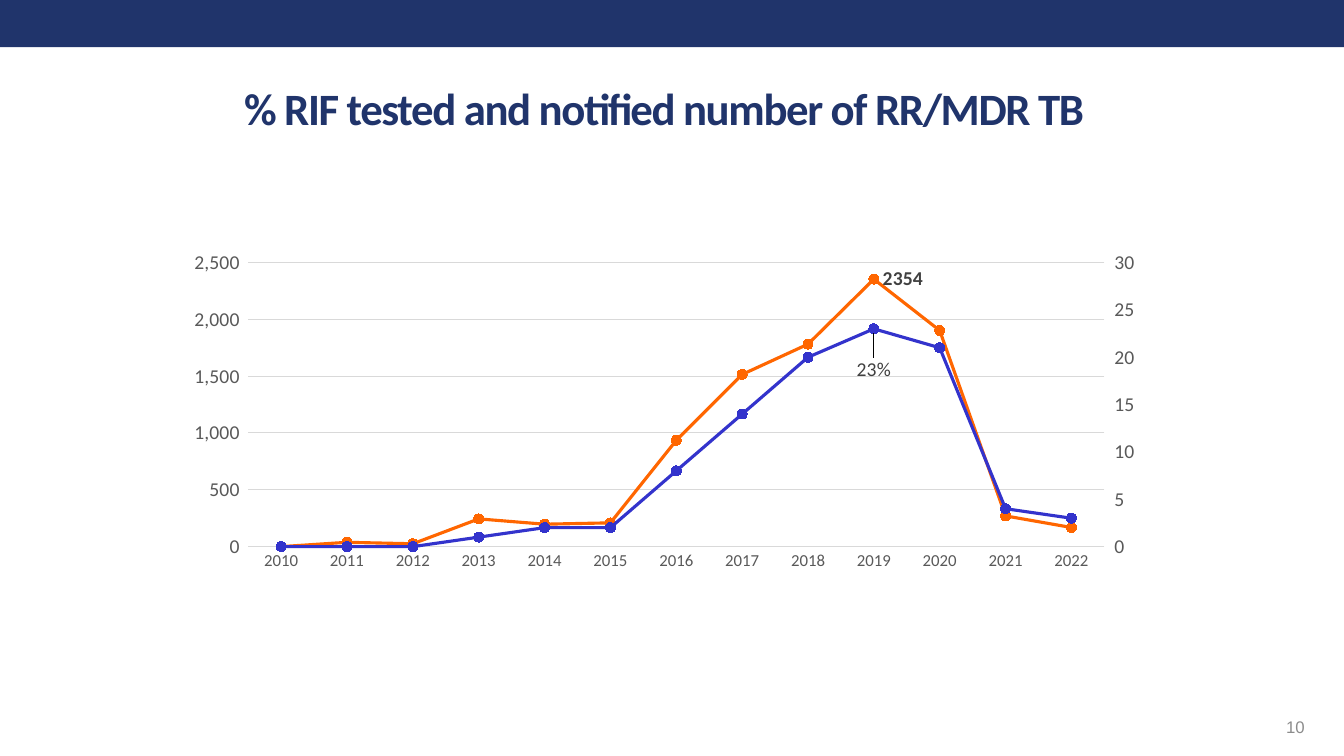
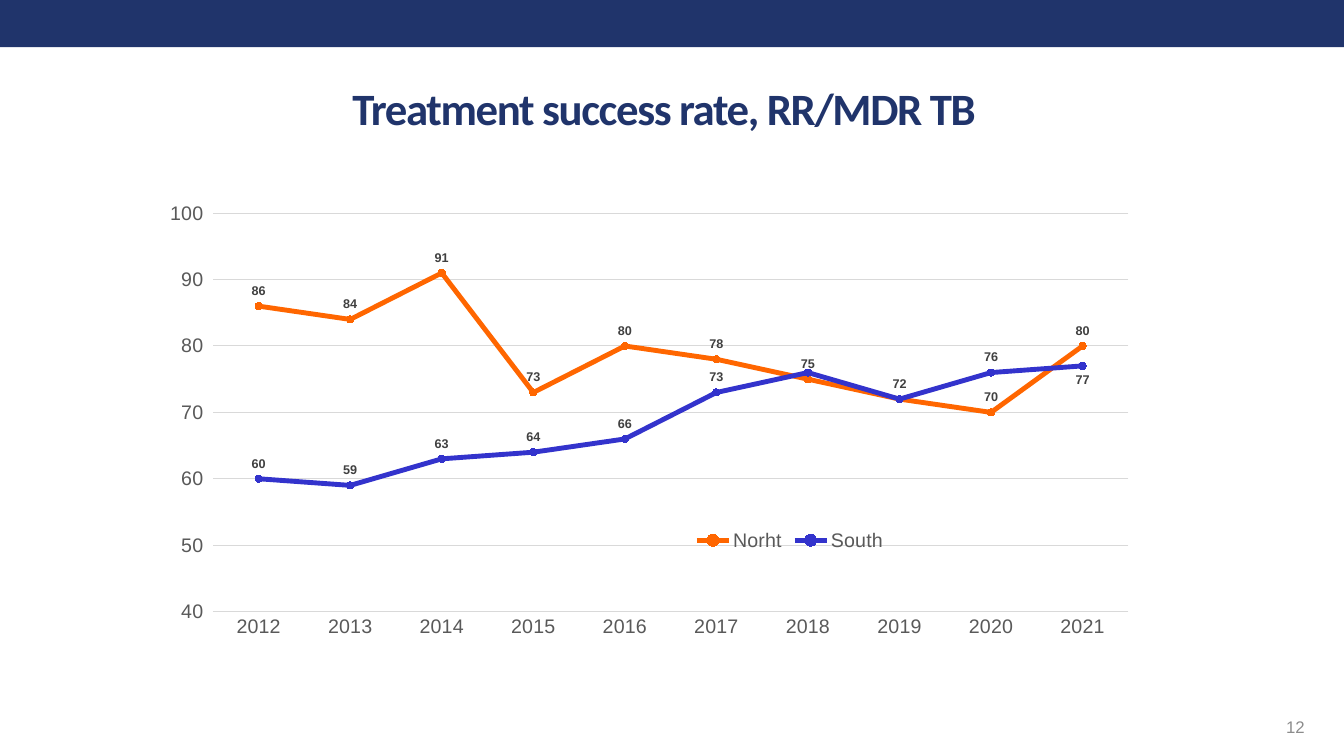
from copy import deepcopy

from pptx import Presentation
from pptx.chart.axis import ValueAxis
from pptx.chart.data import CategoryChartData
from pptx.dml.color import RGBColor
from pptx.enum.chart import (XL_CHART_TYPE, XL_LABEL_POSITION, XL_LEGEND_POSITION,
                             XL_MARKER_STYLE, XL_TICK_MARK)
from pptx.enum.shapes import MSO_SHAPE
from pptx.enum.text import MSO_ANCHOR, PP_ALIGN
from pptx.oxml import parse_xml
from pptx.util import Inches, Pt

LINE_MARKERS = XL_CHART_TYPE.LINE_MARKERS
ABOVE, BELOW, RIGHT = XL_LABEL_POSITION.ABOVE, XL_LABEL_POSITION.BELOW, XL_LABEL_POSITION.RIGHT
LEGEND_BOTTOM = XL_LEGEND_POSITION.BOTTOM
CIRCLE = XL_MARKER_STYLE.CIRCLE
NO_TICK, TICK_OUT = XL_TICK_MARK.NONE, XL_TICK_MARK.OUTSIDE
RECTANGLE = MSO_SHAPE.RECTANGLE
MIDDLE = MSO_ANCHOR.MIDDLE
CENTER, RIGHT_ALIGNED = PP_ALIGN.CENTER, PP_ALIGN.RIGHT

COLORS = {"navy": "20346B", "orange": "FF6600", "blue": "3333CC", "grid": "D9D9D9",
          "axis": "595959", "label": "404040", "number": "8C8C8C", "black": "000000"}
SERIES_COLORS = ("orange", "blue")
HEADING_FONT, BODY_FONT = "Calibri", "Arial"

SLIDE_WIDTH, SLIDE_HEIGHT = Inches(13.33), Inches(7.5)
COLUMN, ROW = SLIDE_WIDTH / 100, SLIDE_HEIGHT / 100
BAND_BOX = (0, 0, 100, 6.25)
TITLE_BOX = (4.13, 8, 90.55, 12.4)
NUMBER_BOX = (86.57, 93.47, 11.25, 5.33)
NOTIFIED_BOX = (12.68, 23.07, 72.39, 64.8)
SUCCESS_BOX = (11.4, 25.6, 74.04, 65.07)

CHART_NAMESPACE = "http://schemas.openxmlformats.org/drawingml/2006/chart"


def place(box):
    left, top, width, height = box
    return int(left * COLUMN), int(top * ROW), int(width * COLUMN), int(height * ROW)


def color(name):
    return RGBColor.from_string(COLORS[name])


def style_font(font, size, color_name, name=BODY_FONT, bold=False):
    font.size = Pt(size)
    font.name = name
    font.bold = bold
    font.color.rgb = color(color_name)


def add_text(slide, box, text, alignment, size, color_name, name=BODY_FONT, bold=False):
    frame = slide.shapes.add_textbox(*place(box)).text_frame
    frame.word_wrap = True
    frame.vertical_anchor = MIDDLE
    paragraph = frame.paragraphs[0]
    paragraph.alignment = alignment
    run = paragraph.add_run()
    run.text = text
    style_font(run.font, size, color_name, name, bold)
    return run


def add_framed_slide(presentation, title, number):
    slide = presentation.slides.add_slide(presentation.slide_layouts[6])
    band = slide.shapes.add_shape(RECTANGLE, *place(BAND_BOX))
    band.shadow.inherit = False
    band.fill.solid()
    band.fill.fore_color.rgb = color("navy")
    band.line.fill.background()
    run = add_text(slide, TITLE_BOX, title, CENTER, 32, "navy", HEADING_FONT, True)
    run._r.get_or_add_rPr().set("spc", "-100")
    add_text(slide, NUMBER_BOX, number, RIGHT_ALIGNED, 12, "number")
    return slide


def make_layout(inner=False, **shares):
    target = '<c:layoutTarget val="inner"/>' if inner else ""
    modes = "".join(f'<c:{side}Mode val="edge"/>' for side in "xy") if "w" in shares else ""
    values = "".join(f'<c:{key} val="{value}"/>' for key, value in shares.items())
    return parse_xml(f'<c:layout xmlns:c="{CHART_NAMESPACE}"><c:manualLayout>'
                     f"{target}{modes}{values}</c:manualLayout></c:layout>")


def style_axis(axis, size, font_name):
    axis.major_tick_mark = axis.minor_tick_mark = NO_TICK
    style_font(axis.tick_labels.font, size, "axis", font_name)


def add_line_chart(slide, box, categories, series, font_name, category_size, number_format, plot):
    data = CategoryChartData()
    data.categories = categories
    for name, values in series:
        data.add_series(name, values)
    chart = slide.shapes.add_chart(LINE_MARKERS, *place(box), data).chart
    chart.has_title = False
    chart.has_legend = False
    style_font(chart.font, 10, "black")
    plot_area = chart._chartSpace.chart.plotArea
    for old_layout in plot_area.xpath("c:layout"):
        plot_area.remove(old_layout)
    plot_area.insert(0, make_layout(True, **dict(zip("xywh", plot))))

    style_axis(chart.category_axis, category_size, font_name)
    chart.category_axis.format.line.color.rgb = color("grid")
    chart.category_axis.format.line.width = Pt(0.75)
    axis = chart.value_axis
    style_axis(axis, 14, font_name)
    axis.format.line.fill.background()
    axis.major_gridlines.format.line.color.rgb = color("grid")
    axis.major_gridlines.format.line.width = Pt(0.75)
    axis.tick_labels.number_format = number_format
    axis.tick_labels.number_format_is_linked = False
    return chart


def set_scale(axis, minimum, maximum, step):
    axis.minimum_scale, axis.maximum_scale, axis.major_unit = minimum, maximum, step


def move_last_series_to_right_axis(chart):
    plot_area = chart._chartSpace.chart.plotArea
    left_lines = plot_area.xpath("c:lineChart")[0]
    right_lines = deepcopy(left_lines)
    left_lines.remove(left_lines.xpath("c:ser")[-1])
    for series in right_lines.xpath("c:ser")[:-1]:
        right_lines.remove(series)
    left_lines.addnext(right_lines)

    category_axis = deepcopy(chart.category_axis._element)
    value_axis = deepcopy(chart.value_axis._element)
    chart.value_axis._element.addnext(value_axis)
    value_axis.addnext(category_axis)
    right_ids = {}
    for index, axis in enumerate((category_axis, value_axis)):
        right_ids[axis.xpath("c:axId")[0].get("val")] = str(5001 + index)
    for part in (right_lines, category_axis, value_axis):
        for reference in part.xpath("c:axId | c:crossAx"):
            reference.set("val", right_ids[reference.get("val")])
    category_axis.xpath("c:delete")[0].set("val", "1")
    value_axis.xpath("c:axPos")[0].set("val", "r")
    value_axis.xpath("c:crosses")[0].set("val", "max")
    right_axis = ValueAxis(value_axis)
    right_axis.has_major_gridlines = False
    right_axis.major_tick_mark = TICK_OUT
    right_axis.tick_labels.number_format = "General"
    return right_axis


def style_series(chart, line_width, marker_size):
    for series, color_name in zip(chart.series, SERIES_COLORS):
        series.smooth = False
        series.format.line.color.rgb = color(color_name)
        series.format.line.width = Pt(line_width)
        series.marker.style = CIRCLE
        series.marker.size = marker_size
        series.marker.format.fill.solid()
        series.marker.format.fill.fore_color.rgb = color(color_name)
        series.marker.format.line.color.rgb = color(color_name)
    for plot in chart.plots:
        plot.vary_by_categories = False


def find_label(series, index):
    return series.data_labels._element.xpath(f'c:dLbl[c:idx/@val="{index}"]')[0]


def add_notified_chart(slide, box):
    series = (
        ("Series 1", (0, 38, 25, 244, 197, 209, 935, 1515, 1782, 2354, 1902, 270, 168)),
        ("Series 2", (None, None, None, 1, 2, 2, 8, 14, 20, 23, 21, 4, 3)),
    )
    years = [str(year) for year in range(2010, 2023)]
    chart = add_line_chart(slide, box, years, series, HEADING_FONT, 12,
                           r"#,##0_);[Red]\(#,##0\)", (0.08, 0.18, 0.88, 0.58))
    chart._chartSpace.xpath("c:chart/c:dispBlanksAs")[0].set("val", "zero")
    right_axis = move_last_series_to_right_axis(chart)
    set_scale(chart.value_axis, 0, 2500, 500)
    set_scale(right_axis, 0, 30, 5)
    style_series(chart, 2.25, 7)

    peak = years.index("2019")
    notified, tested = chart.series
    for line in (notified, tested):
        line.data_labels.show_value = False
    notified_label = notified.points[peak].data_label
    notified_label.position = RIGHT
    style_font(notified_label.font, 14, "label", HEADING_FONT, True)
    tested_label = tested.points[peak].data_label
    tested_label.position = BELOW
    run = tested_label.text_frame.paragraphs[0].add_run()
    run.text = "23%"
    style_font(run.font, 14, "label", HEADING_FONT)
    find_label(tested, peak).xpath("c:idx")[0].addnext(make_layout(x=0, y=0.04))


def add_success_chart(slide, box):
    series = (
        ("Norht", (86, 84, 91, 73, 80, 78, 75, 72, 70, 80)),
        ("South", (60, 59, 63, 64, 66, 73, 76, 72, 76, 77)),
    )
    years = [str(year) for year in range(2012, 2022)]
    chart = add_line_chart(slide, box, years, series, BODY_FONT, 14, "0_ ",
                           (0.06, 0.04, 0.92, 0.81))
    set_scale(chart.value_axis, 40, 100, 10)
    style_series(chart, 3.5, 5)
    for line in chart.series:
        labels = line.data_labels
        labels.show_value = True
        labels.position = ABOVE
        labels.number_format = "0"
        labels.number_format_is_linked = False
        style_font(labels.font, 9, "label", bold=True)

    south = chart.series[1]
    for year in ("2018", "2019"):
        index = years.index(year)
        south.points[index].data_label.position = ABOVE
        find_label(south, index).xpath("c:showVal")[0].set("val", "0")
    last_label = south.points[len(years) - 1].data_label
    last_label.position = BELOW
    style_font(last_label.font, 9, "label", bold=True)

    chart.has_legend = True
    legend = chart.legend
    legend.position = LEGEND_BOTTOM
    legend.include_in_layout = False
    style_font(legend.font, 14, "axis")
    legend._element.xpath("c:legendPos")[0].addnext(make_layout(x=0.54, y=0.67, w=0.2, h=0.07))


def main():
    presentation = Presentation()
    presentation.slide_width, presentation.slide_height = SLIDE_WIDTH, SLIDE_HEIGHT
    slide = add_framed_slide(presentation, "% RIF tested and notified number of RR/MDR TB", "10")
    add_notified_chart(slide, NOTIFIED_BOX)
    slide = add_framed_slide(presentation, "Treatment success rate, RR/MDR TB", "12")
    add_success_chart(slide, SUCCESS_BOX)
    presentation.save("out.pptx")


if __name__ == "__main__":
    main()
